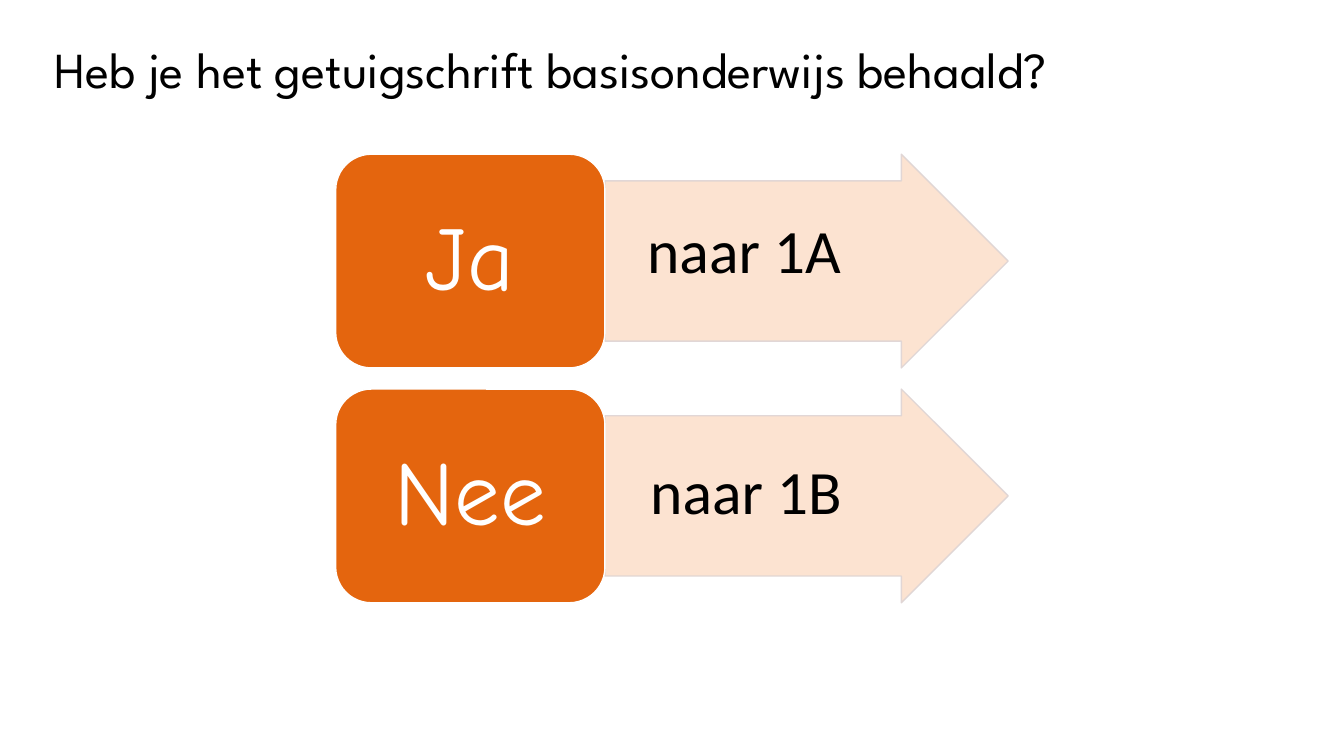
from dataclasses import dataclass

from lxml.etree import SubElement
from pptx import Presentation
from pptx.dml.color import RGBColor as Rgb
from pptx.enum.shapes import MSO_SHAPE as Shape
from pptx.enum.text import MSO_ANCHOR as Anchor, PP_ALIGN as Align
from pptx.oxml.ns import qn
from pptx.util import Inches, Pt


@dataclass(frozen=True)
class Theme:
    card: str = "E4650E"
    arrow: str = "FCE0CD"
    arrow_line: str = "DED4D4"
    light: str = "FFFFFF"
    dark: str = "000000"
    title_font: str = "League Spartan"
    card_font: str = "Comic Neue"
    body_font: str = "Calibri"
    title_size: int = 36
    card_size: int = 65
    body_size: int = 44
    line_width: int = 1
    arrow_opacity: int = 90


def write(frame, text, font, size, color, align=Align.LEFT, spacing=None):
    frame.word_wrap = True
    para = frame.paragraphs[0]
    para.alignment = align
    para.line_spacing = spacing
    span = para.add_run()
    span.text = text
    span.font.name = font
    span.font.size = Pt(size)
    span.font.color.rgb = Rgb.from_string(color)


class SlideBuilder:
    """Draws themed elements on one slide."""

    def __init__(self, page, theme):
        self.page = page
        self.theme = theme

    def shape(self, kind, left, top, width, height, fill, line, opacity=100):
        shape = self.page.shapes.add_shape(
            kind, Inches(left), Inches(top), Inches(width), Inches(height))
        shape.shadow.inherit = False
        shape.fill.solid()
        shape.fill.fore_color.rgb = Rgb.from_string(fill)
        shape.line.color.rgb = Rgb.from_string(line)
        shape.line.width = Pt(self.theme.line_width)
        if opacity < 100:
            for color in shape._element.spPr.iter(qn("a:srgbClr")):
                SubElement(color, qn("a:alpha"), val=str(opacity * 1000))
        return shape

    def arrow(self, left, top, width, height):
        theme = self.theme
        arrow = self.shape(Shape.RIGHT_ARROW, left, top, width, height,
                           theme.arrow, theme.arrow_line, theme.arrow_opacity)
        arrow.adjustments[0] = 0.75
        arrow.adjustments[1] = 0.5

    def card(self, text, left, top, width, height):
        theme = self.theme
        card = self.shape(Shape.ROUNDED_RECTANGLE, left, top, width, height,
                          theme.card, theme.light)
        frame = card.text_frame
        frame.vertical_anchor = Anchor.MIDDLE
        frame.margin_left = frame.margin_right = Inches(0.27)
        frame.margin_top = frame.margin_bottom = Inches(0.14)
        write(frame, text, theme.card_font, theme.card_size, theme.light,
              align=Align.CENTER, spacing=0.9)

    def text(self, text, left, top, width, height, **style):
        box = self.page.shapes.add_textbox(
            Inches(left), Inches(top), Inches(width), Inches(height))
        write(box.text_frame, text, **style)


def main():
    deck = Presentation()
    deck.slide_width = Inches(13.33)
    deck.slide_height = Inches(7.5)
    theme = Theme()
    builder = SlideBuilder(deck.slides.add_slide(deck.slide_layouts[6]), theme)

    builder.text("Heb je het getuigschrift basisonderwijs behaald?",
                 0.44, 0.4, 12.89, 1.1, font=theme.title_font,
                 size=theme.title_size, color=theme.dark, spacing=0.9)

    first_top, row_height, row_step = 1.53, 2.12, 2.33
    choices = [("Ja", "naar 1A", 6.32, 2.05), ("Nee", "naar 1B", 6.35, 4.44)]
    for row, (answer, route, route_left, route_top) in enumerate(choices):
        top = first_top + row * row_step
        builder.arrow(6, top, 4, row_height)
        builder.card(answer, 3.33, top, 2.67, row_height)
        builder.text(route, route_left, route_top, 2.49, 0.84,
                     font=theme.body_font, size=theme.body_size, color=theme.dark)

    deck.save("out.pptx")


if __name__ == "__main__":
    main()
